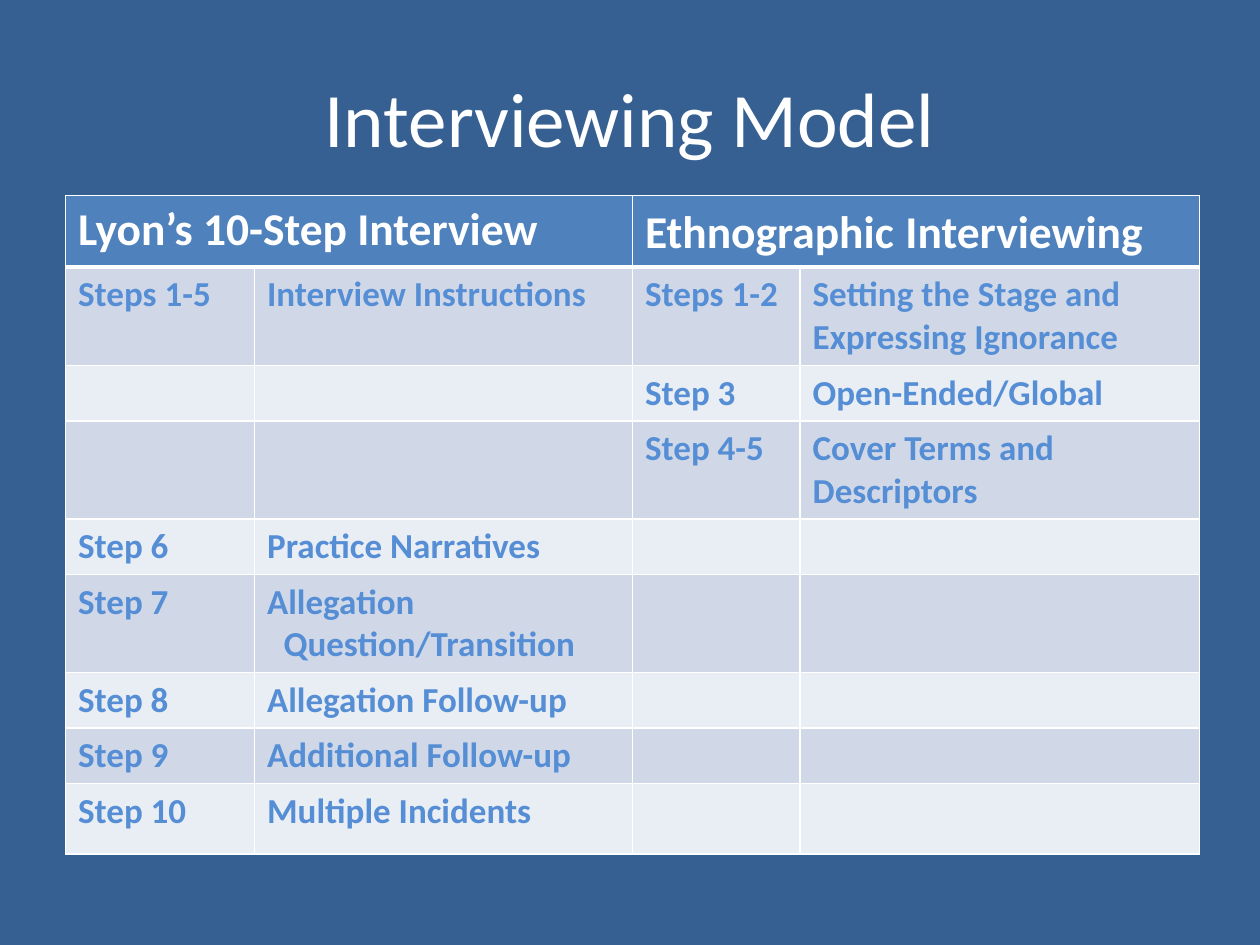
from typing import NamedTuple

from lxml import etree
from pptx import Presentation
from pptx.dml.color import RGBColor
from pptx.enum import text as t
from pptx.oxml import ns
from pptx.util import Inches, Pt

WHITE, BACKDROP, HEADER = "FFFFFF", "376092", "4F81BD"
STEP_BLUE, BANDS = "558ED5", ("D0D8E8", "E9EDF4")
COLUMN_WIDTHS = (1.5, 3, 1.33, 3.17)
HEADER_HEIGHT = 0.57


class Step(NamedTuple):
    height: float
    lyon_step: str = ""
    lyon_topic: str = ""
    ethno_step: str = ""
    ethno_topic: str = ""


STEPS = (
    Step(0.78, "Steps 1-5", "Interview Instructions",
         "Steps 1-2", "Setting the Stage and Expressing Ignorance"),
    Step(0.44, ethno_step="Step 3", ethno_topic="Open-Ended/Global"),
    Step(0.78, ethno_step="Step 4-5", ethno_topic="Cover Terms and Descriptors"),
    Step(0.44, "Step 6", "Practice Narratives"),
    Step(0.78, "Step 7", "Allegation\nQuestion/Transition"),
    Step(0.44, "Step 8", "Allegation Follow-up"),
    Step(0.44, "Step 9", "Additional Follow-up"),
    Step(0.56, "Step 10", "Multiple Incidents"),
)


def rgb(color: str) -> RGBColor:
    return RGBColor.from_string(color)


def add_run(paragraph, wording: str, *, size: float, color: str = WHITE,
            bold: bool = False) -> None:
    run = paragraph.add_run()
    run.text = wording
    run.font.name = "Calibri"
    run.font.size = Pt(size)
    run.font.bold = bold
    run.font.color.rgb = rgb(color)


def style_cell(cell, fill: str, top: float = 1, bottom: float = 1) -> None:
    """Fill a cell and give it white borders, with widths in points."""
    properties = cell._tc.get_or_add_tcPr()
    for side, width in (("L", 1), ("R", 1), ("T", top), ("B", bottom)):
        line = etree.SubElement(properties, ns.qn(f"a:ln{side}"), w=str(Pt(width)))
        solid = etree.SubElement(line, ns.qn("a:solidFill"))
        etree.SubElement(solid, ns.qn("a:srgbClr"), val=WHITE)
    cell.fill.solid()
    cell.fill.fore_color.rgb = rgb(fill)


def add_title(slide, wording: str) -> None:
    box = slide.shapes.add_textbox(Inches(0.5), Inches(0.3), Inches(9), Inches(1.25))
    frame = box.text_frame
    frame.word_wrap = True
    frame.vertical_anchor = t.MSO_ANCHOR.MIDDLE
    frame.paragraphs[0].alignment = t.PP_ALIGN.CENTER
    add_run(frame.paragraphs[0], wording, size=44)


def fill_header(table) -> None:
    for column in range(4):
        style_cell(table.cell(0, column), HEADER, bottom=3)
    for column in (0, 2):
        table.cell(0, column).merge(table.cell(0, column + 1))
    lyon, ethnographic = (table.cell(0, c).text_frame.paragraphs[0] for c in (0, 2))
    add_run(lyon, "Lyon’s 10-Step Interview", size=26, bold=True)
    for wording, size in (("Ethnographic", 26), (" ", 28), ("Interviewing", 26)):
        add_run(ethnographic, wording, size=size, bold=True)


def fill_step(table, row: int, step: Step) -> None:
    table.rows[row].height = Inches(step.height)
    for column, wording in enumerate(step[1:]):
        cell = table.cell(row, column)
        style_cell(cell, BANDS[(row - 1) % 2], top=3 if row == 1 else 1)
        if not wording:
            continue
        frame = cell.text_frame
        for index, line in enumerate(wording.split("\n")):
            paragraph = frame.add_paragraph() if index else frame.paragraphs[0]
            if index:
                paragraph._p.get_or_add_pPr().set("marL", str(Inches(0.13)))
            add_run(paragraph, line, size=20, color=STEP_BLUE, bold=True)


def add_comparison(slide) -> None:
    height = HEADER_HEIGHT + sum(step.height for step in STEPS)
    table = slide.shapes.add_table(
        len(STEPS) + 1, len(COLUMN_WIDTHS),
        Inches(0.52), Inches(1.55), Inches(sum(COLUMN_WIDTHS)), Inches(height),
    ).table
    table.horz_banding = False
    for column, width in zip(table.columns, COLUMN_WIDTHS):
        column.width = Inches(width)
    table.rows[0].height = Inches(HEADER_HEIGHT)
    fill_header(table)
    for row, step in enumerate(STEPS, start=1):
        fill_step(table, row, step)


def main() -> None:
    deck = Presentation()
    deck.slide_width, deck.slide_height = Inches(10), Inches(7.5)
    slide = deck.slides.add_slide(deck.slide_layouts[6])
    slide.background.fill.solid()
    slide.background.fill.fore_color.rgb = rgb(BACKDROP)
    add_title(slide, "Interviewing Model")
    add_comparison(slide)
    deck.save("out.pptx")


if __name__ == "__main__":
    main()
